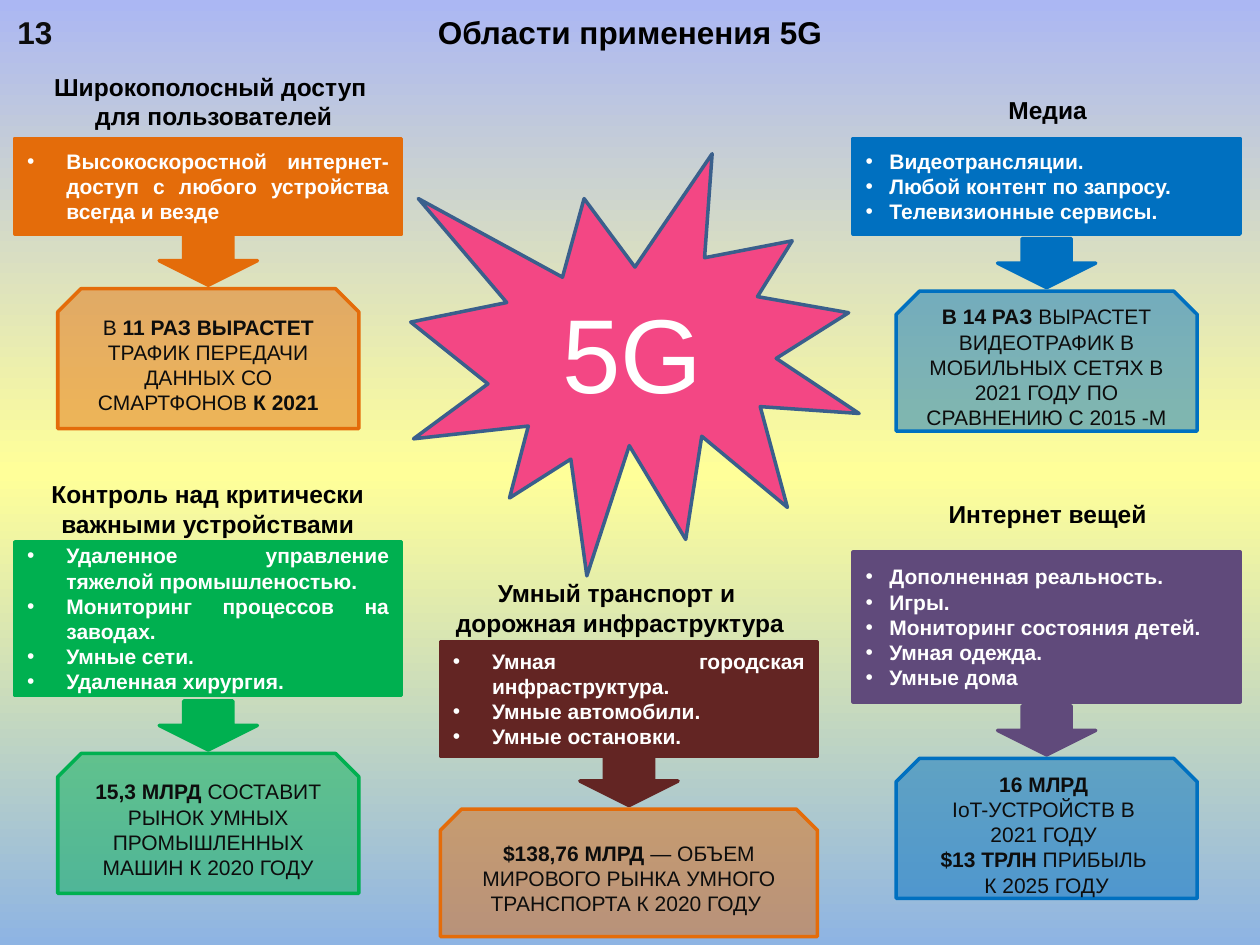
from copy import deepcopy

from lxml import etree
from pptx import Presentation
from pptx.dml.color import RGBColor
from pptx.enum.shapes import MSO_SHAPE
from pptx.enum.text import MSO_ANCHOR, MSO_AUTO_SIZE, PP_ALIGN
from pptx.oxml.ns import qn
from pptx.util import Cm, Pt

RECT = MSO_SHAPE.RECTANGLE
ARROW = MSO_SHAPE.DOWN_ARROW
SNIPPED = MSO_SHAPE.SNIP_2_SAME_RECTANGLE
BURST = MSO_SHAPE.EXPLOSION1
CENTER, LEFT, JUSTIFY = PP_ALIGN.CENTER, PP_ALIGN.LEFT, PP_ALIGN.JUSTIFY

COLORS = {
    "orange": "E46C0A", "green": "00B050", "blue": "0070C0",
    "purple": "604A7B", "maroon": "632523", "pink": "F34784",
    "outline": "3A5F8C", "white": "FFFFFF", "black": "000000",
    "ink": "0D0D0D", "sky": "8EB4E3", "yellow": "FFFF99", "lilac": "ABB7F3",
}
RGB = {name: RGBColor.from_string(value) for name, value in COLORS.items()}


def add_figure(kind, left, top, width, height, fill, line):
    figure = slide.shapes.add_shape(kind, Cm(left), Cm(top), Cm(width), Cm(height))
    figure.shadow.inherit = False
    figure.fill.solid()
    figure.fill.fore_color.rgb = RGB[fill]
    figure.line.color.rgb = RGB[line]
    figure.line.width = Pt(2)
    return figure


def write(frame, lines, size, color, align, bold=False):
    """Fill a frame, one paragraph a line; parts between asterisks switch the weight."""
    frame.vertical_anchor = MSO_ANCHOR.MIDDLE
    frame.text = "\n".join(line.replace("*", "") for line in lines)
    for paragraph, line in zip(frame.paragraphs, lines):
        paragraph.alignment = align
        if "*" in line:
            paragraph.clear()
            for part in line.split("*"):
                paragraph.add_run().text = part
        for index, run in enumerate(paragraph.runs):
            run.font.name = "Arial"
            run.font.size = Pt(size)
            run.font.color.rgb = RGB[color]
            run.font.bold = bold if index % 2 == 0 else not bold


prs = Presentation()
prs.slide_width, prs.slide_height = Cm(25.4), Cm(19.05)
slide = prs.slides.add_slide(prs.slide_layouts[5])

# Background: three stops, running from the bottom to the top
backdrop = slide.background.fill
backdrop.gradient()
backdrop.gradient_angle = 90
first_stop = slide.background._cSld.find(".//" + qn("a:gs"))
middle_stop = deepcopy(first_stop)
first_stop.addnext(middle_stop)
for stop, position, name in zip(backdrop.gradient_stops, (0, 0.5, 1),
                                ("sky", "yellow", "lilac")):
    stop.position = position
    stop.color.rgb = RGB[name]

# Title and page number
title = slide.shapes.title
title.left, title.top, title.width, title.height = Cm(1.3), Cm(0.13), Cm(22.8), Cm(1.02)
title.text_frame.auto_size = MSO_AUTO_SIZE.NONE
write(title.text_frame, ["Области применения 5G"], 18, "black", CENTER, True)
number = slide.shapes.add_textbox(Cm(0.1), Cm(0.13), Cm(1.4), Cm(1.02))
number.text_frame.word_wrap = True
write(number.text_frame, ["13"], 18, "ink", LEFT, True)

burst = add_figure(BURST, 8.28, 3.1, 9.04, 8.51, "pink", "outline")
write(burst.text_frame, ["5G"], 60, "white", CENTER)

# colour, outcome colour, column centre, bullet indent,
# heading (centre, top, width, lines), facts (top, width, height, lines),
# outcome (top, width, height, lines)
areas = [
    ("orange", "orange", 4.2, 0.79,
     (4.31, 1.32, 6.99, ["Широкополосный доступ ", "для пользователей"]),
     (2.79, 7.8, 1.93,
      ["Высокоскоростной интернет-доступ с любого устройства всегда и везде"]),
     (5.82, 6.07, 2.82,
      ["В *11 РАЗ ВЫРАСТЕТ *ТРАФИК ПЕРЕДАЧИ ДАННЫХ СО СМАРТФОНОВ *К 2021"])),
    ("green", "green", 4.2, 0.79,
     (4.19, 9.53, 6.86, ["Контроль над критически", "важными устройствами"]),
     (10.92, 7.8, 3.1,
      ["Удаленное управление тяжелой промышленостью.",
       "Мониторинг процессов на заводах.", "Умные сети. ", "Удаленная хирургия."]),
     (15.19, 6.07, 2.82,
      ["*15,3 МЛРД *СОСТАВИТ РЫНОК УМНЫХ ПРОМЫШЛЕННЫХ МАШИН К 2020 ГОДУ"])),
    ("maroon", "orange", 12.68, 0.79,
     (12.5, 11.53, 7.16, ["Умный транспорт и ", "дорожная инфраструктура"]),
     (12.93, 7.6, 2.31,
      ["Умная городская инфраструктура.", "Умные автомобили.", "Умные остановки."]),
     (16.31, 7.6, 2.57,
      ["*$138,76 МЛРД *— ОБЪЕМ МИРОВОГО РЫНКА УМНОГО ТРАНСПОРТА К 2020 ГОДУ "])),
    ("blue", "blue", 21.1, 0.48,
     (21.12, 1.78, 2.11, ["Медиа"]),
     (2.79, 7.8, 1.93,
      ["Видеотрансляции.", "Любой контент по запросу.", "Телевизионные сервисы."]),
     (5.87, 6.07, 2.82,
      ["*В 14 РАЗ *ВЫРАСТЕТ ВИДЕОТРАФИК В МОБИЛЬНЫХ СЕТЯХ В 2021 ГОДУ "
       "ПО СРАВНЕНИЮ С 2015 -М"])),
    ("purple", "blue", 21.1, 0.48,
     (21.12, 9.93, 4.55, ["Интернет вещей"]),
     (11.13, 7.8, 3.02,
      ["Дополненная реальность.", "Игры.", "Мониторинг состояния детей.",
       "Умная одежда.", "Умные дома"]),
     (15.29, 6.07, 2.82,
      ["*16 МЛРД *", "IoT-УСТРОЙСТВ В ", "2021 ГОДУ ",
       "*$13 ТРЛН *ПРИБЫЛЬ ", "К 2025 ГОДУ"])),
]

ARROW_WIDTH, ARROW_HEIGHT, ARROW_RISE = 1.98, 0.99, 1.06

for color, outcome_color, center, indent, heading, facts, outcome in areas:
    middle, top, width, lines = heading
    height = 0.27 + 0.59 * len(lines)
    caption = slide.shapes.add_textbox(Cm(middle - width / 2), Cm(top), Cm(width), Cm(height))
    caption.text_frame.word_wrap = False
    write(caption.text_frame, lines, 14, "black", CENTER, True)

    top, width, height, lines = facts
    panel = add_figure(RECT, center - width / 2, top, width, height, color, color)
    write(panel.text_frame, lines, 12, "white", JUSTIFY, True)
    for paragraph in panel.text_frame.paragraphs:
        properties = paragraph._p.get_or_add_pPr()
        properties.set("marL", str(Cm(indent)))
        properties.set("indent", str(-Cm(indent)))
        etree.SubElement(properties, qn("a:buFont")).set("typeface", "Arial")
        etree.SubElement(properties, qn("a:buChar")).set("char", "•")

    top, width, height, lines = outcome
    add_figure(ARROW, center - ARROW_WIDTH / 2, top - ARROW_RISE,
               ARROW_WIDTH, ARROW_HEIGHT, color, color)
    result = add_figure(SNIPPED, center - width / 2, top, width, height,
                        outcome_color, outcome_color)
    fill_color = result._element.spPr.find(qn("a:solidFill"))[0]
    etree.SubElement(fill_color, qn("a:alpha")).set("val", "48000")
    write(result.text_frame, lines, 12, "ink", CENTER)

prs.save("out.pptx")
